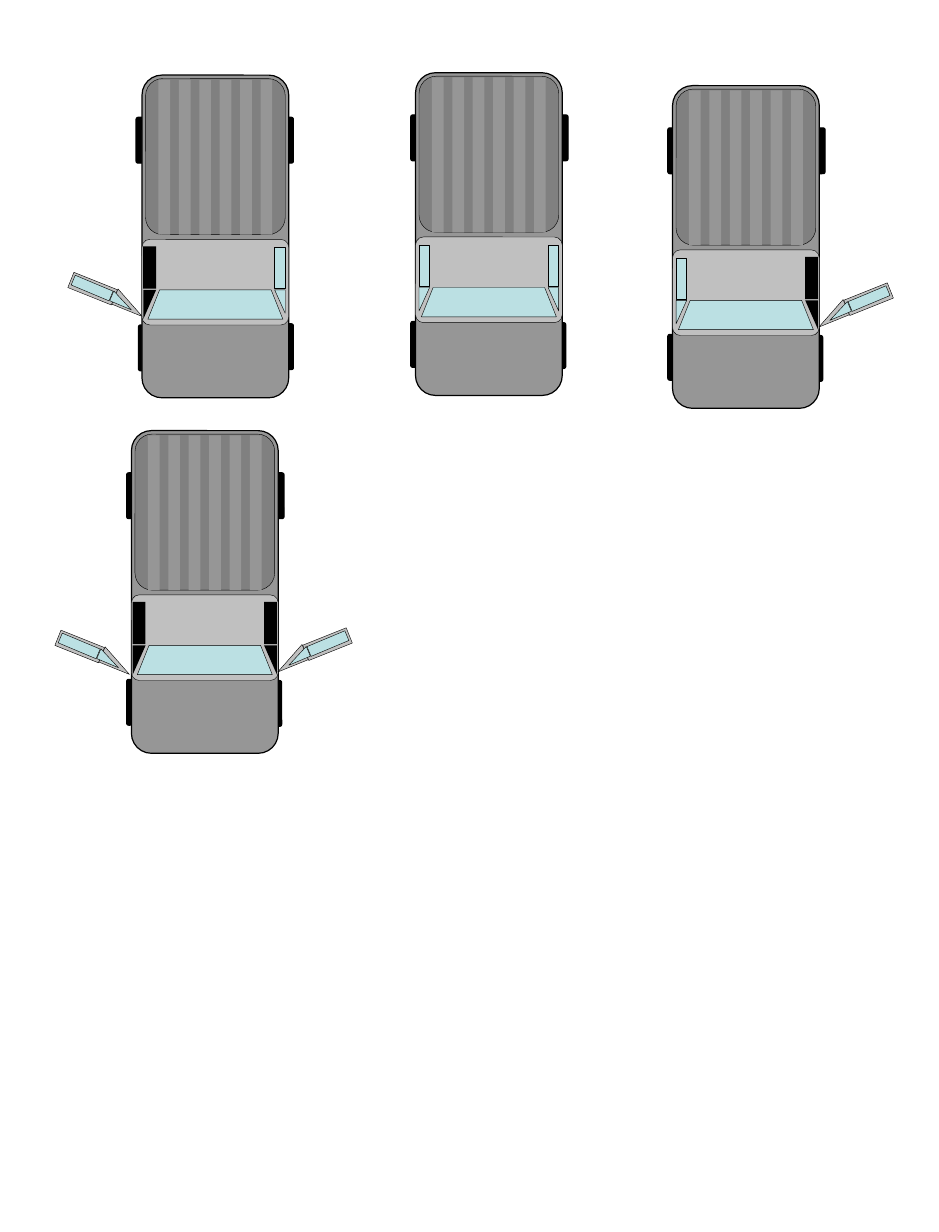
import pptx
import pptx.util
import pptx.dml.color
import pptx.enum.shapes

Inches = pptx.util.Inches
Kind = pptx.enum.shapes.MSO_SHAPE
ROUND, RECT, TRI = Kind.ROUNDED_RECTANGLE, Kind.RECTANGLE, Kind.RIGHT_TRIANGLE
BLACK, GREY, DARK, PALE, GLASS = "000000", "969696", "808080", "C0C0C0", "BBE0E3"
WIDE = 1.25


def paint(shape, fill, line):
    shape.shadow.inherit = False
    shape.fill.solid()
    shape.fill.fore_color.rgb = pptx.dml.color.RGBColor.from_string(fill)
    if line:
        shape.line.color.rgb = pptx.dml.color.RGBColor.from_string(BLACK)
        shape.line.width = pptx.util.Pt(line)
    else:
        shape.line.fill.background()


def draw(group, kind, box, fill, line=0, turn=0, flip=False, curve=None):
    shape = group.shapes.add_shape(kind, *[Inches(n) for n in box])
    shape.rotation = turn % 360
    if flip:
        shape.element.spPr.get_or_add_xfrm().set("flipH", "1")
    if curve is not None:
        shape.adjustments[0] = curve
    paint(shape, fill, line)


deck = pptx.Presentation()
deck.slide_width, deck.slide_height = Inches(8), Inches(10.5)
slide = deck.slides.add_slide(deck.slide_layouts[6])

wheels = [(1.2, 0.36), (-0.04, 2.12), (1.18, 2.13), (-0.04, 0.36)]
pane = [(-0.05, 0), (-0.15, -0.25), (-1.1, -0.25), (-1.2, 0)]

shut = [
    (RECT, 1.13, 1.47, 0.09, 0.35, GLASS, 0.25, 0),
    (TRI, 1.13, 1.83, 0.09, 0.2, GLASS, 0.25, 180),
]
ajar = [
    (RECT, 1.6, 1.62, 0.14, 0.4, PALE, 0.25, 68.2),
    (TRI, 1.28, 1.8, 0.14, 0.28, PALE, 0.25, 248),
    (RECT, 1.63, 1.64, 0.09, 0.35, GLASS, 0.25, 67.2),
    (TRI, 1.37, 1.82, 0.09, 0.2, GLASS, 0.25, 247.2),
    (RECT, 1.13, 1.46, 0.11, 0.36, BLACK, 0, 0),
    (TRI, 1.13, 1.83, 0.11, 0.25, BLACK, 0, 180),
]

# left, top, mirrored, left door, right door, left door offset
trucks = [
    (1.12, 3.67, False, ajar, ajar, 0.02),
    (1.21, 0.64, True, ajar, shut, 0),
    (3.54, 0.62, False, shut, shut, 0),
    (5.73, 0.73, False, shut, ajar, 0),
]

for left, top, mirror, port, right, slip in trucks:
    truck = slide.shapes.add_group_shape()

    for x, y in wheels:
        if mirror:
            x = WIDE - x - 0.1
        draw(truck, ROUND, (left + x, top + y, 0.1, 0.39), BLACK, 0.75, curve=0.167)

    draw(truck, ROUND, (left, top, WIDE, 2.75), GREY, 0.75, curve=0.136)
    draw(truck, ROUND, (left, top + 1.4, WIDE, 0.73), PALE, 0.25, curve=0.092)

    points = [(Inches(left + WIDE + x), Inches(top + 2.08 + y)) for x, y in pane]
    path = truck.shapes.build_freeform(*points[0])
    path.add_line_segments(points[1:], close=True)
    paint(path.convert_to_shape(), GLASS, 0.25)

    for kind, x, y, w, h, fill, line, turn in right:
        box = (left + x, top + y, w, h)
        draw(truck, kind, box, fill, line, turn, kind == RECT)
    for kind, x, y, w, h, fill, line, turn in port:
        shift = slip if fill != BLACK else 0
        box = (left + WIDE - x - w - shift, top + y + shift, w, h)
        draw(truck, kind, box, fill, line, -turn, kind == TRI)

    draw(truck, ROUND, (left + 0.03, top + 0.03, 1.19, 1.33), DARK, 0.25, curve=0.123)
    for i in range(6):
        draw(truck, RECT, (left + 0.14 + 0.174 * i, top + 0.04, 0.1, 1.32), GREY)

deck.save("out.pptx")
